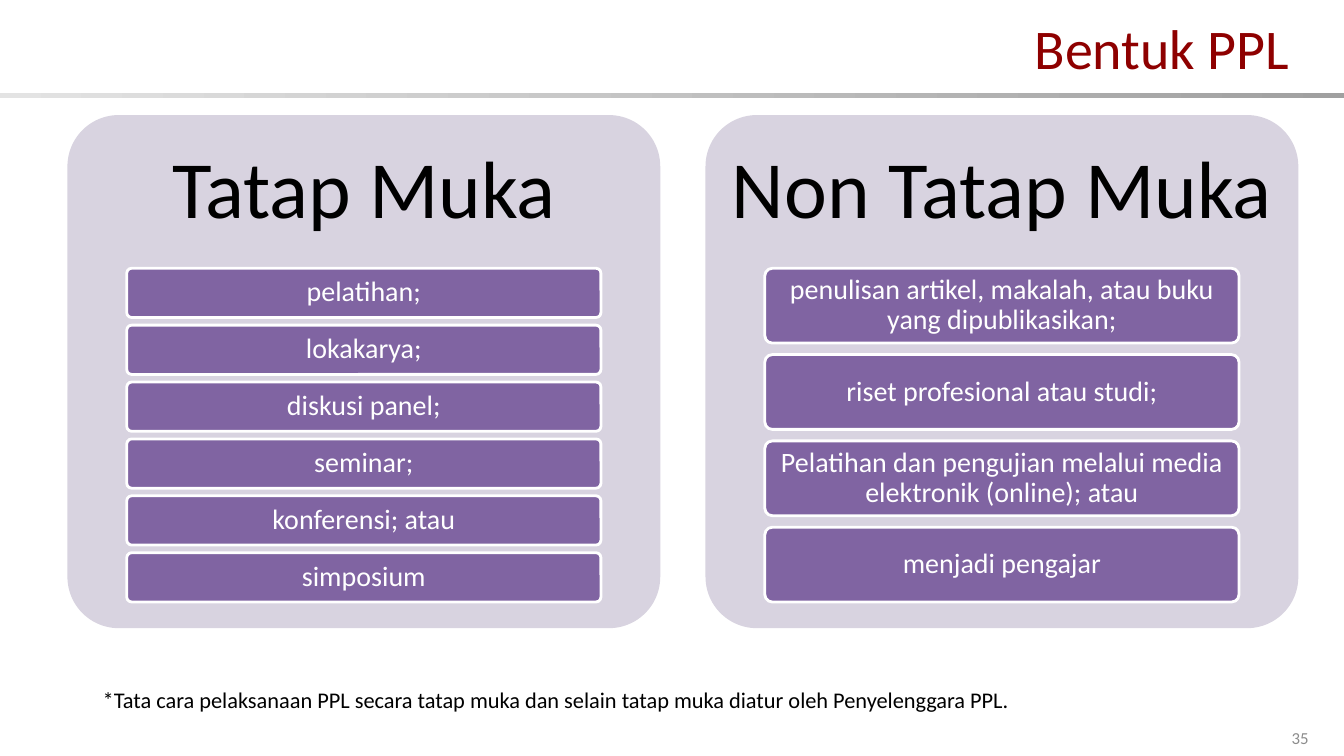
from pptx import Presentation
from pptx.dml.color import RGBColor
from pptx.enum.shapes import MSO_SHAPE
from pptx.enum.text import MSO_ANCHOR, PP_ALIGN
from pptx.util import Cm, Pt

RECT = MSO_SHAPE.RECTANGLE
ROUNDED = MSO_SHAPE.ROUNDED_RECTANGLE
LEFT, CENTER, RIGHT = PP_ALIGN.LEFT, PP_ALIGN.CENTER, PP_ALIGN.RIGHT
MIDDLE = MSO_ANCHOR.MIDDLE

PANEL_W, PANEL_H, PANEL_TOP = 14.94, 12.93, 2.9
HEADING_H = 3.88
BAR_W, BARS_TOP, BARS_H = 11.95, 6.76, 8.41
GAP_RATIO = 2 / 13  # gap between bars relative to bar height

PANELS = [
    (1.7, "Tatap Muka", [
        "pelatihan;", "lokakarya;", "diskusi panel;",
        "seminar;", "konferensi; atau", "simposium",
    ]),
    (17.78, "Non Tatap Muka", [
        "penulisan artikel, makalah, atau buku yang dipublikasikan;",
        "riset profesional atau studi;",
        "Pelatihan dan pengujian melalui media elektronik (online); atau",
        "menjadi pengajar",
    ]),
]


def rgb(value):
    return RGBColor.from_string(value)


def write(sp, text, size, color, align=CENTER, inset=(0.25, 0.13), spacing=1.0, wrap=True):
    """Put one formatted run, vertically centred, into a shape."""
    tf = sp.text_frame
    tf.word_wrap = wrap
    tf.vertical_anchor = MIDDLE
    tf.margin_left = tf.margin_right = Cm(inset[0])
    tf.margin_top = tf.margin_bottom = Cm(inset[1])
    p = tf.paragraphs[0]
    p.alignment = align
    p.line_spacing = spacing
    r = p.add_run()
    r.text = text
    r.font.name = "Calibri"
    r.font.size = Pt(size)
    r.font.color.rgb = rgb(color)


prs = Presentation()
prs.slide_width, prs.slide_height = Cm(33.87), Cm(19.05)
s = prs.slides.add_slide(prs.slide_layouts[6])
shapes = s.shapes

# Title and the rule under it
rule = shapes.add_shape(RECT, Cm(0), Cm(2.34), prs.slide_width, Cm(0.13))
rule.shadow.inherit = False
rule.line.fill.background()
rule.fill.gradient()
rule.fill.gradient_angle = 0
for stop, color in zip(rule.fill.gradient_stops, ("E3E3E3", "A0A0A0")):
    stop.color.rgb = rgb(color)

title = shapes.add_textbox(Cm(5.13), Cm(0.43), Cm(27.61), Cm(1.5))
write(title, "Bentuk PPL", 40, "8E0000", RIGHT)

# Panels with evenly spaced bars
for left, heading, items in PANELS:
    panel = shapes.add_shape(ROUNDED, Cm(left), Cm(PANEL_TOP), Cm(PANEL_W), Cm(PANEL_H))
    panel.adjustments[0] = 0.1
    panel.shadow.inherit = False
    panel.fill.solid()
    panel.fill.fore_color.rgb = rgb("D8D3E0")
    panel.line.fill.background()

    head = shapes.add_textbox(Cm(left), Cm(PANEL_TOP), Cm(PANEL_W), Cm(HEADING_H))
    write(head, heading, 58, "000000", inset=(0.61, 0.61), spacing=0.9)

    bar_h = BARS_H / (len(items) + (len(items) - 1) * GAP_RATIO)
    bar_left = left + (PANEL_W - BAR_W) / 2
    for i, item in enumerate(items):
        bar_top = BARS_TOP + i * bar_h * (1 + GAP_RATIO)
        bar = shapes.add_shape(ROUNDED, Cm(bar_left), Cm(bar_top), Cm(BAR_W), Cm(bar_h))
        bar.adjustments[0] = 0.1
        bar.shadow.inherit = False
        bar.fill.solid()
        bar.fill.fore_color.rgb = rgb("8064A2")
        bar.line.color.rgb = rgb("FFFFFF")
        bar.line.width = Pt(2)
        write(bar, item, 20, "FFFFFF", inset=(0.15, 0.1), spacing=0.9)

# Footnote and slide number
note = shapes.add_textbox(Cm(2.34), Cm(17.17), Cm(23.6), Cm(0.94))
write(note, "*Tata cara pelaksanaan PPL secara tatap muka dan selain tatap muka "
      "diatur oleh Penyelenggara PPL.", 16, "000000", LEFT, wrap=False)

number = shapes.add_shape(RECT, Cm(32.18), Cm(18.03), Cm(1.17), Cm(1.12))
number.shadow.inherit = False
number.fill.solid()
number.fill.fore_color.rgb = rgb("FFFFFF")
number.line.fill.background()
write(number, "35", 12, "8C8C8C")

prs.save("out.pptx")
